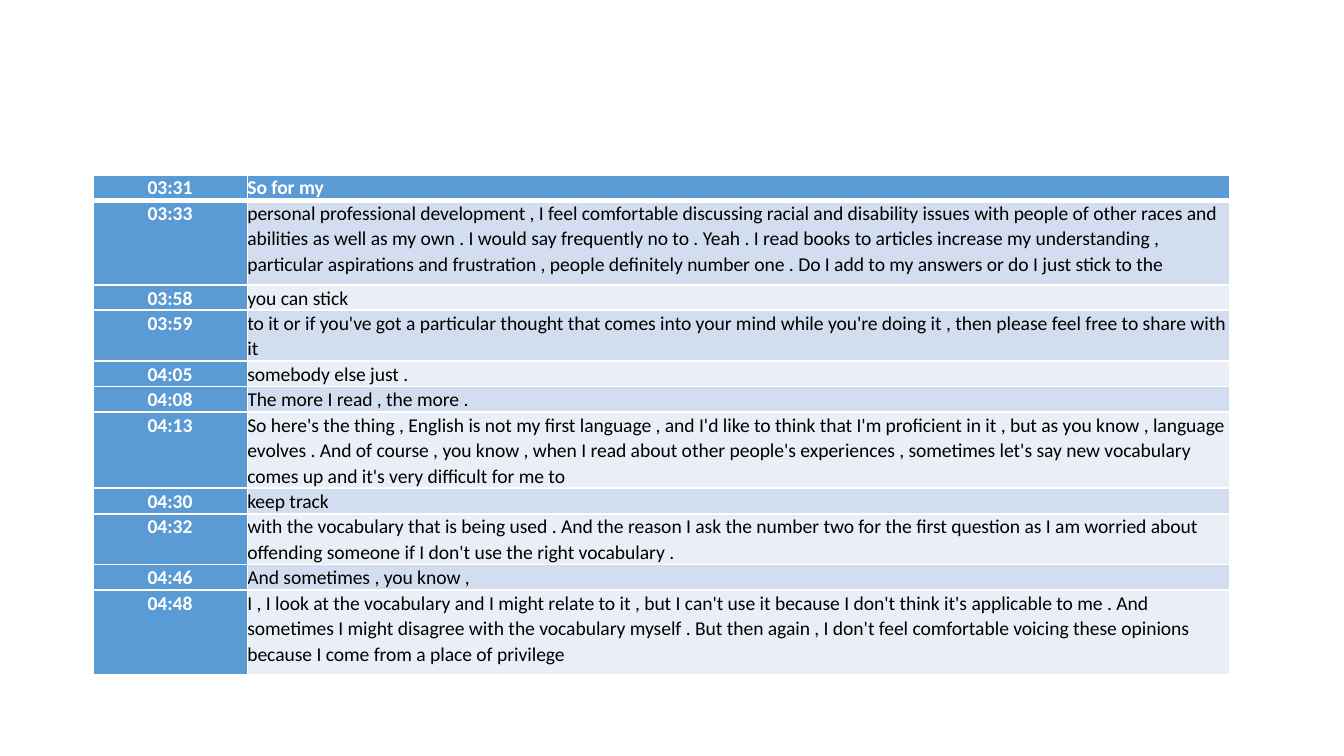
"""Build a slide with a time-stamped interview transcript table."""
import pptx
import pptx.dml.color
import pptx.enum.text
import pptx.oxml
import pptx.oxml.ns
import pptx.util

Inches = pptx.util.Inches
Pt = pptx.util.Pt
RGBColor = pptx.dml.color.RGBColor

TRANSCRIPT = [
    ("03:31", 0.13, "So for my"),
    ("03:33", 0.63, "personal professional development , I feel comfortable discussing racial and "
     "disability issues with people of other races and abilities as well as my own . I would say "
     "frequently no to . Yeah . I read books to articles increase my understanding , particular "
     "aspirations and frustration , people definitely number one . Do I add to my answers or do I "
     "just stick to the"),
    ("03:58", 0.13, "you can stick"),
    ("03:59", 0.25, "to it or if you've got a particular thought that comes into your mind while "
     "you're doing it , then please feel free to share with it"),
    ("04:05", 0.13, "somebody else just ."),
    ("04:08", 0.13, "The more I read , the more ."),
    ("04:13", 0.5, "So here's the thing , English is not my first language , and I'd like to think "
     "that I'm proficient in it , but as you know , language evolves . And of course , you know , "
     "when I read about other people's experiences , sometimes let's say new vocabulary comes up "
     "and it's very difficult for me to"),
    ("04:30", 0.13, "keep track"),
    ("04:32", 0.37, "with the vocabulary that is being used . And the reason I ask the number two "
     "for the first question as I am worried about offending someone if I don't use the right "
     "vocabulary ."),
    ("04:46", 0.13, "And sometimes , you know ,"),
    ("04:48", 0.63, "I , I look at the vocabulary and I might relate to it , but I can't use it "
     "because I don't think it's applicable to me . And sometimes I might disagree with the "
     "vocabulary myself . But then again , I don't feel comfortable voicing these opinions because "
     "I come from a place of privilege"),
]
SLIDE_WIDTH = 10
SLIDE_HEIGHT = SLIDE_WIDTH * 9 / 16
COLUMN_WIDTHS = (1.15, 7.31)
LEFT, TOP = 0.69, 1.3

WHITE = RGBColor(0xFF, 0xFF, 0xFF)
BLACK = RGBColor(0x00, 0x00, 0x00)
BLUE = RGBColor(0x5B, 0x9B, 0xD5)
BANDS = (RGBColor(0xEA, 0xEF, 0xF7), RGBColor(0xD2, 0xDE, 0xEF))


def add_borders(cell, top, bottom):
    properties = cell._tc.get_or_add_tcPr()
    for side, width in (("L", 1), ("R", 1), ("T", top), ("B", bottom)):
        properties.append(pptx.oxml.parse_xml(
            f'<a:ln{side} {pptx.oxml.ns.nsdecls("a")} w="{Pt(width)}"><a:solidFill>'
            f'<a:srgbClr val="{WHITE}"/></a:solidFill></a:ln{side}>'))


def fill_cell(cell, text, row, column):
    emphasized = row == 0 or column == 0
    cell.margin_left = cell.margin_right = cell.margin_top = cell.margin_bottom = 0
    add_borders(cell, 3 if row == 1 else 1, 3 if row == 0 else 1)
    cell.fill.solid()
    cell.fill.fore_color.rgb = BLUE if emphasized else BANDS[row % 2]
    cell.text = text
    paragraph = cell.text_frame.paragraphs[0]
    if column == 0:
        paragraph.alignment = pptx.enum.text.PP_ALIGN.CENTER
    paragraph.line_spacing = 1.07
    paragraph.space_after = Pt(8)
    paragraph.font.name = "Calibri"
    paragraph.font.size = Pt(10.5)
    paragraph.font.bold = emphasized
    paragraph.font.color.rgb = WHITE if emphasized else BLACK


def main():
    deck = pptx.Presentation()
    deck.slide_width, deck.slide_height = Inches(SLIDE_WIDTH), Inches(SLIDE_HEIGHT)
    slide = deck.slides.add_slide(deck.slide_layouts[6])
    height = sum(row_height for _, row_height, _ in TRANSCRIPT)
    transcript = slide.shapes.add_table(
        len(TRANSCRIPT), len(COLUMN_WIDTHS), Inches(LEFT), Inches(TOP),
        Inches(sum(COLUMN_WIDTHS)), Inches(height)).table
    for column, width in zip(transcript.columns, COLUMN_WIDTHS):
        column.width = Inches(width)
    for row, (time, row_height, speech) in enumerate(TRANSCRIPT):
        transcript.rows[row].height = Inches(row_height)
        for column, text in enumerate((time, speech)):
            fill_cell(transcript.cell(row, column), text, row, column)
    deck.save("out.pptx")


if __name__ == "__main__":
    main()
